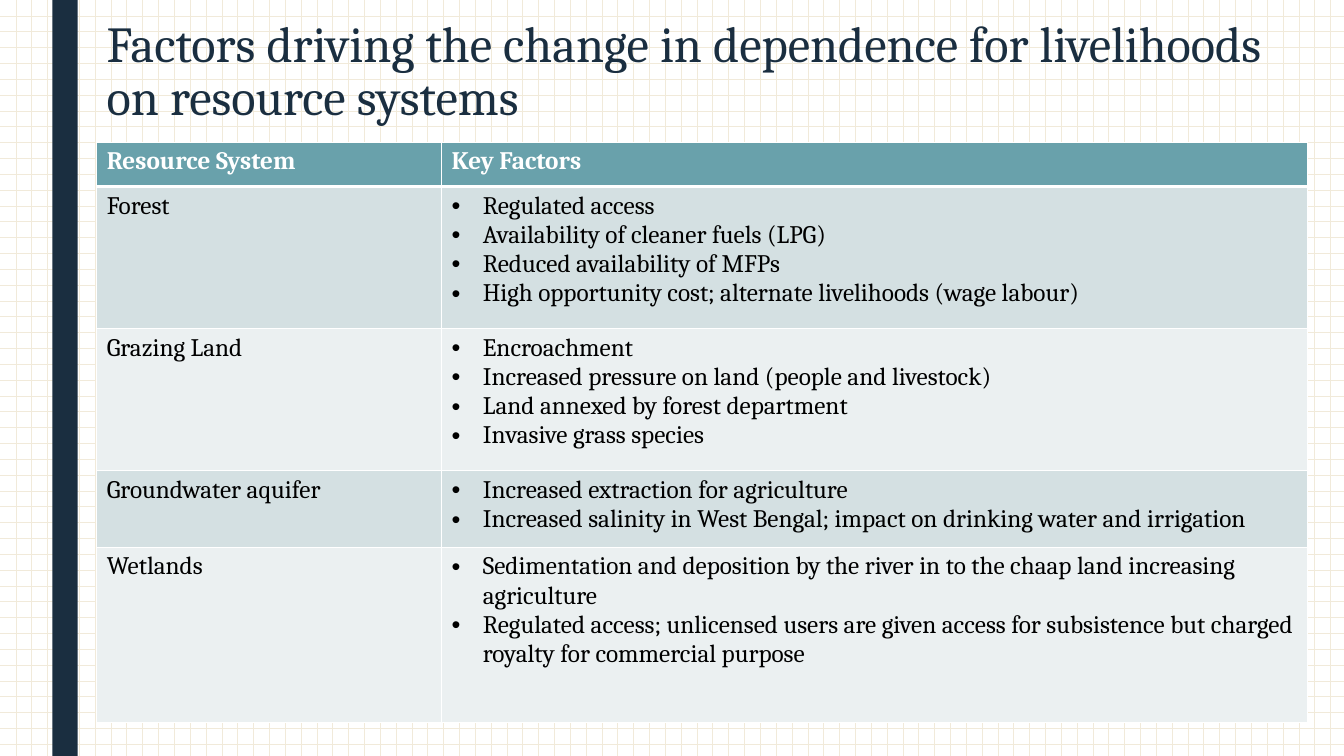
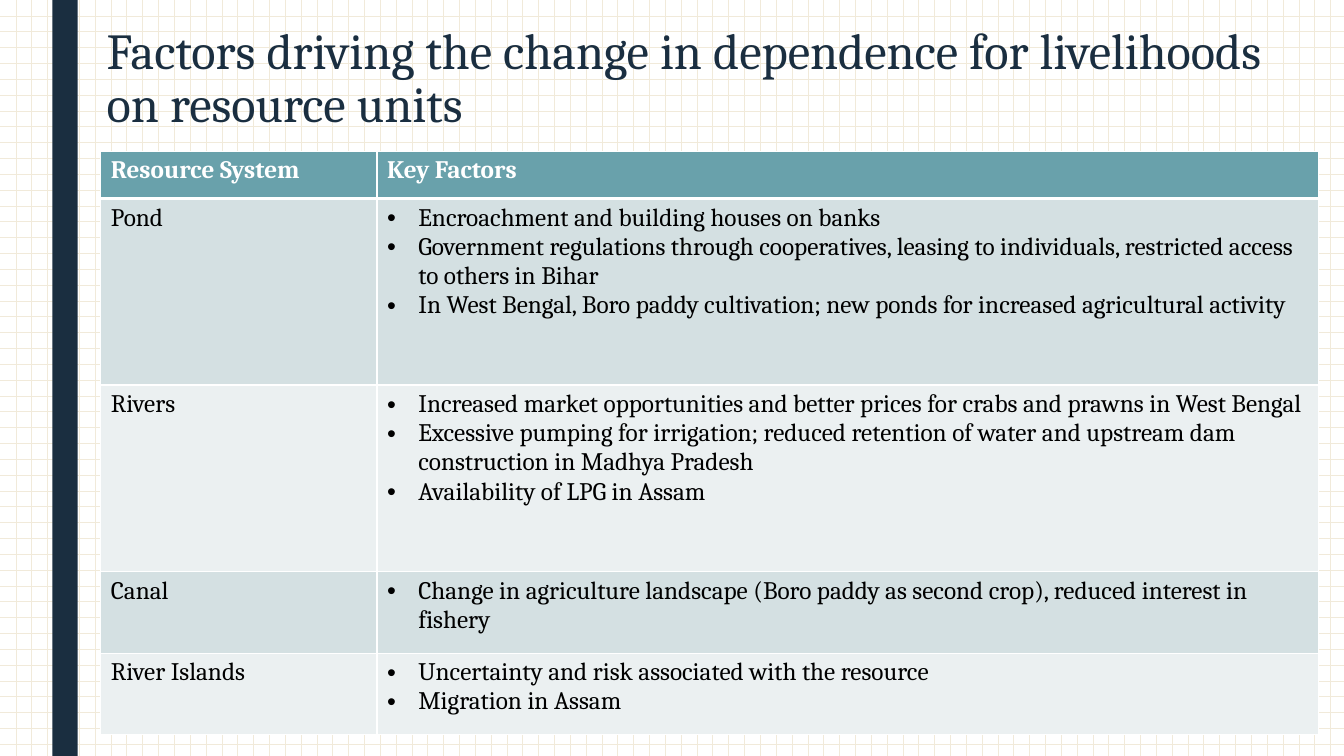
from lxml.etree import SubElement
from pptx import Presentation
from pptx.dml.color import RGBColor
from pptx.enum.dml import MSO_PATTERN as Pattern
from pptx.enum.shapes import MSO_SHAPE as Preset
from pptx.enum.text import MSO_ANCHOR as Anchor
from pptx.oxml.ns import qn
from pptx.util import Inches, Pt

FONT = "Cambria"
NAVY, TEAL, WHITE, BLACK = "1A2E40", "69A1AB", "FFFFFF", "000000"
GRID = "F1EADA"
BANDS = ("D4E0E2", "EBF0F1")
HEADINGS = ("Resource System", "Key Factors")
TITLE_START = "Factors driving the change in dependence for livelihoods on resource "

SYSTEMS = {
    "Forest": [
        "Regulated access",
        "Availability of cleaner fuels (LPG)",
        "Reduced availability of MFPs",
        "High opportunity cost; alternate livelihoods (wage labour)",
    ],
    "Grazing Land": [
        "Encroachment",
        "Increased pressure on land (people and livestock)",
        "Land annexed by forest department",
        "Invasive grass species",
    ],
    "Groundwater aquifer": [
        "Increased extraction for agriculture",
        "Increased salinity in West Bengal; impact on drinking water and irrigation",
    ],
    "Wetlands": [
        "Sedimentation and deposition by the river in to the chaap land increasing agriculture",
        "Regulated access; unlicensed users are given access for subsistence but charged "
        "royalty for commercial purpose",
    ],
}
UNITS = {
    "Pond": [
        "Encroachment and building houses on banks",
        "Government regulations through cooperatives, leasing to individuals, "
        "restricted access to others in Bihar",
        "In West Bengal, Boro paddy cultivation; new ponds for increased agricultural activity",
    ],
    "Rivers": [
        "Increased market opportunities and better prices for crabs and prawns in West Bengal",
        "Excessive pumping for irrigation; reduced retention of water and upstream dam "
        "construction in Madhya Pradesh",
        "Availability of LPG in Assam",
    ],
    "Canal": [
        "Change in agriculture landscape (Boro paddy as second crop), "
        "reduced interest in fishery",
    ],
    "River Islands": [
        "Uncertainty and risk associated with the resource",
        "Migration in Assam",
    ],
}


def rgb(value):
    """Turn a hex string into a colour."""
    return RGBColor.from_string(value)


def write(frame, lines, size=18, color=BLACK, bold=False, bullets=False, spacing=None):
    """Fill a text frame with one paragraph per line."""
    frame.word_wrap = True
    for index, line in enumerate(lines):
        paragraph = frame.add_paragraph() if index else frame.paragraphs[0]
        if spacing:
            paragraph.line_spacing = spacing
        run = paragraph.add_run()
        run.text = line
        run.font.name, run.font.size, run.font.bold = FONT, Pt(size), bold
        run.font.color.rgb = rgb(color)
        if bullets:
            props = paragraph._p.get_or_add_pPr()
            props.set("marL", str(Inches(0.31)))
            props.set("indent", str(-Inches(0.31)))
            SubElement(props, qn("a:buFont"), typeface="Arial")
            SubElement(props, qn("a:buChar"), char="•")


def style_cell(cell, fill, top=1, bottom=1):
    """Give a cell white borders and a solid fill."""
    props = cell._tc.get_or_add_tcPr()
    for side, width in (("L", 1), ("R", 1), ("T", top), ("B", bottom)):
        line = SubElement(props, qn(f"a:ln{side}"), w=str(Pt(width)))
        SubElement(SubElement(line, qn("a:solidFill")), qn("a:srgbClr"), val=WHITE)
    cell.fill.solid()
    cell.fill.fore_color.rgb = rgb(fill)


def add_band(slide, height):
    """Draw the dark band down the left side."""
    band = slide.shapes.add_shape(Preset.RECTANGLE, Inches(0.52), 0, Inches(0.25), height)
    band.shadow.inherit = False
    band.fill.solid()
    band.fill.fore_color.rgb = rgb(NAVY)
    band.line.fill.background()


def add_title(slide, text, box):
    """Place the slide title in its box."""
    frame = slide.shapes.add_textbox(*map(Inches, box)).text_frame
    frame.vertical_anchor = Anchor.TOP
    write(frame, [text], size=36, color=NAVY, spacing=0.89)


def add_factors(slide, factors, left, top, widths, heights):
    """Place the table of resources and their key factors."""
    table = slide.shapes.add_table(
        len(heights), len(widths), Inches(left), Inches(top),
        Inches(sum(widths)), Inches(sum(heights))).table
    for column, width in zip(table.columns, widths):
        column.width = Inches(width)
    for row, height in zip(table.rows, heights):
        row.height = Inches(height)
    for column, heading in enumerate(HEADINGS):
        cell = table.cell(0, column)
        style_cell(cell, TEAL, bottom=3)
        write(cell.text_frame, [heading], color=WHITE, bold=True)
    for row, (resource, reasons) in enumerate(factors.items(), start=1):
        for column, lines in enumerate(([resource], reasons)):
            cell = table.cell(row, column)
            style_cell(cell, BANDS[(row - 1) % 2], top=3 if row == 1 else 1)
            write(cell.text_frame, lines, bullets=column == 1)


def add_factor_slide(deck, topic, title_box, factors, **layout):
    """Build one slide with its band, title and table."""
    slide = deck.slides.add_slide(deck.slide_layouts[6])
    add_band(slide, deck.slide_height)
    add_title(slide, TITLE_START + topic, title_box)
    add_factors(slide, factors, **layout)


def main():
    """Build and save the deck."""
    deck = Presentation()
    deck.slide_width, deck.slide_height = Inches(13.33), Inches(7.5)
    paper = deck.slide_master.background.fill
    paper.patterned()
    paper.pattern = Pattern.DOTTED_GRID
    paper.fore_color.rgb, paper.back_color.rgb = rgb(GRID), rgb(WHITE)
    add_factor_slide(deck, "systems", (0.96, 0.14, 11.89, 1.27), SYSTEMS,
                     left=0.96, top=1.41, widths=(3.42, 8.59),
                     heights=(0.44, 1.41, 1.41, 0.76, 1.74))
    add_factor_slide(deck, "units", (0.96, 0.21, 11.89, 1.07), UNITS,
                     left=1, top=1.5, widths=(2.74, 9.34),
                     heights=(0.47, 1.85, 1.85, 0.81, 0.81))
    deck.save("out.pptx")


if __name__ == "__main__":
    main()
